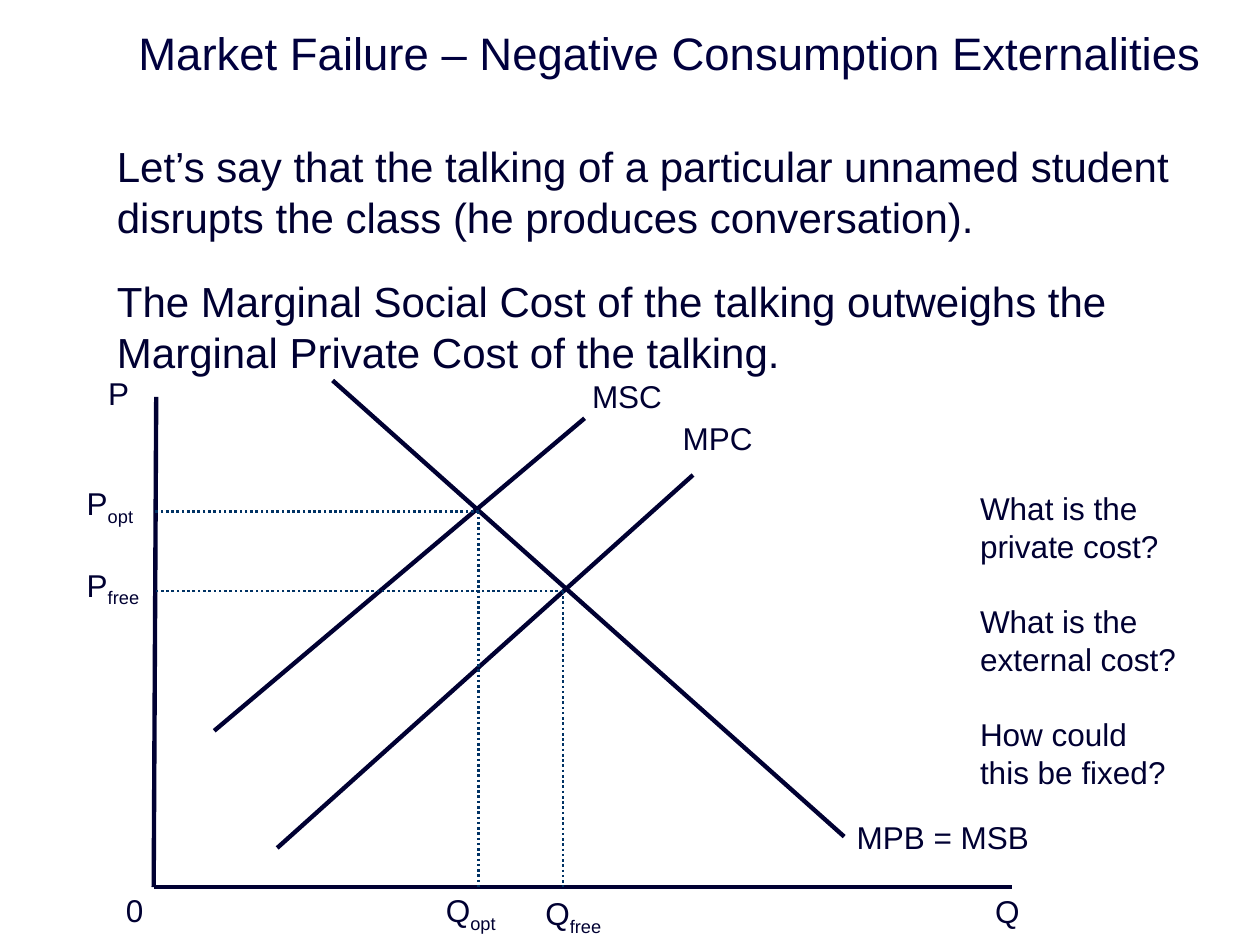
from dataclasses import dataclass

from lxml import etree
from pptx import Presentation
from pptx.dml.color import RGBColor
from pptx.enum.dml import MSO_LINE
from pptx.enum.shapes import MSO_CONNECTOR
from pptx.enum.text import MSO_ANCHOR
from pptx.oxml.ns import qn
from pptx.util import Inches, Pt

STRAIGHT = MSO_CONNECTOR.STRAIGHT
DOTTED = MSO_LINE.ROUND_DOT
TOP, MIDDLE = MSO_ANCHOR.TOP, MSO_ANCHOR.MIDDLE


@dataclass(frozen=True)
class Theme:
    font: str = "Arial"
    title_color: RGBColor = RGBColor(0x00, 0x00, 0x3E)
    ink: RGBColor = RGBColor(0x00, 0x00, 0x32)
    guide: RGBColor = RGBColor(0x00, 0x32, 0x64)
    title_size: float = 26
    body_size: float = 24
    label_size: float = 18
    body_gap: float = 19.5
    question_gap: float = 21.5
    curve_width: float = 2.5
    guide_width: float = 1.5


THEME = Theme()


def style_run(run, size, color):
    run.font.name = THEME.font
    run.font.size = Pt(size)
    run.font.color.rgb = color


def add_text(slide, box, paragraphs, size, color=THEME.ink, gap=0, anchor=TOP):
    frame = slide.shapes.add_textbox(*map(Inches, box)).text_frame
    frame.word_wrap = True
    frame.vertical_anchor = anchor
    frame.text = "\n".join(paragraphs)
    for index, paragraph in enumerate(frame.paragraphs):
        if index:
            paragraph.space_before = Pt(gap)
        for run in paragraph.runs:
            style_run(run, size, color)
    return frame


def add_label(slide, box, text, subscript=""):
    paragraph = add_text(slide, box, [text], THEME.label_size).paragraphs[0]
    if subscript:
        run = paragraph.add_run()
        run.text = subscript
        style_run(run, THEME.label_size, THEME.ink)
        run.font._element.set("baseline", "-25000")


def add_line(slide, start, end, color, width, dash=None):
    connector = slide.shapes.add_connector(STRAIGHT, *map(Inches, start + end))
    connector.line.color.rgb = color
    connector.line.width = Pt(width)
    if dash:
        connector.line.dash_style = dash
    etree.SubElement(connector._element.spPr, qn("a:effectLst"))


def add_title(slide, box):
    add_text(slide, box, ["Market Failure – Negative Consumption Externalities"],
             THEME.title_size, THEME.title_color, anchor=MIDDLE)


def add_scenario(slide, box):
    add_text(slide, box, [
        "Let’s say that the talking of a particular unnamed student "
        "disrupts the class (he produces conversation).",
        "The Marginal Social Cost of the talking outweighs the "
        "Marginal Private Cost of the talking.",
    ], THEME.body_size, gap=THEME.body_gap)


def add_questions(slide, box):
    add_text(slide, box, [
        "What is the private cost?",
        "What is the external cost?",
        "How could this be fixed?",
    ], THEME.label_size, gap=THEME.question_gap)


def add_diagram(slide, box):
    left, top, width, height = box
    right, bottom = left + width, top + height

    def at(x, y):
        return left + x, top + y

    optimum, free_market = at(2.58, 1.04), at(3.25, 1.67)

    axes_and_curves = [
        (at(0.02, 0.13), (left, bottom)),
        ((left, bottom), (right, bottom)),
        (at(4.28, 0.75), at(0.98, 3.71)),
        (at(1.42, 0), at(5.48, 3.62)),
        (at(3.42, 0.3), at(0.48, 2.78)),
    ]
    for start, end in axes_and_curves:
        add_line(slide, start, end, THEME.ink, THEME.curve_width)

    for x, y in (optimum, free_market):
        for foot in ((left, y), (x, bottom)):
            add_line(slide, (x, y), foot, THEME.guide, THEME.guide_width, DOTTED)

    labels = [
        (-0.46, -0.1, 0.64, "P", ""),
        (-0.63, 0.77, 0.74, "P", "opt"),
        (-0.63, 1.42, 0.74, "P", "free"),
        (-0.32, 4, 0.64, "0", ""),
        (2.22, 4, 0.84, "Q", "opt"),
        (3.01, 4.03, 0.84, "Q", "free"),
        (6.58, 4.01, 0.64, "Q", ""),
        (3.38, -0.08, 1.68, "MSC", ""),
        (4.1, 0.26, 1.68, "MPC", ""),
        (5.48, 3.42, 2.02, "MPB = MSB", ""),
    ]
    for x, y, label_width, text, subscript in labels:
        add_label(slide, (*at(x, y), label_width, 0.4), text, subscript)


def main():
    presentation = Presentation()
    presentation.slide_width = Inches(10)
    presentation.slide_height = Inches(7.5)
    slide = presentation.slides.add_slide(presentation.slide_layouts[6])
    add_title(slide, (1, 0.16, 9, 0.51))
    add_scenario(slide, (0.83, 1.07, 8.83, 2.44))
    add_questions(slide, (7.68, 3.83, 1.8, 2.52))
    add_diagram(slide, (1.22, 3.02, 6.81, 4.02))
    presentation.save("out.pptx")


if __name__ == "__main__":
    main()
